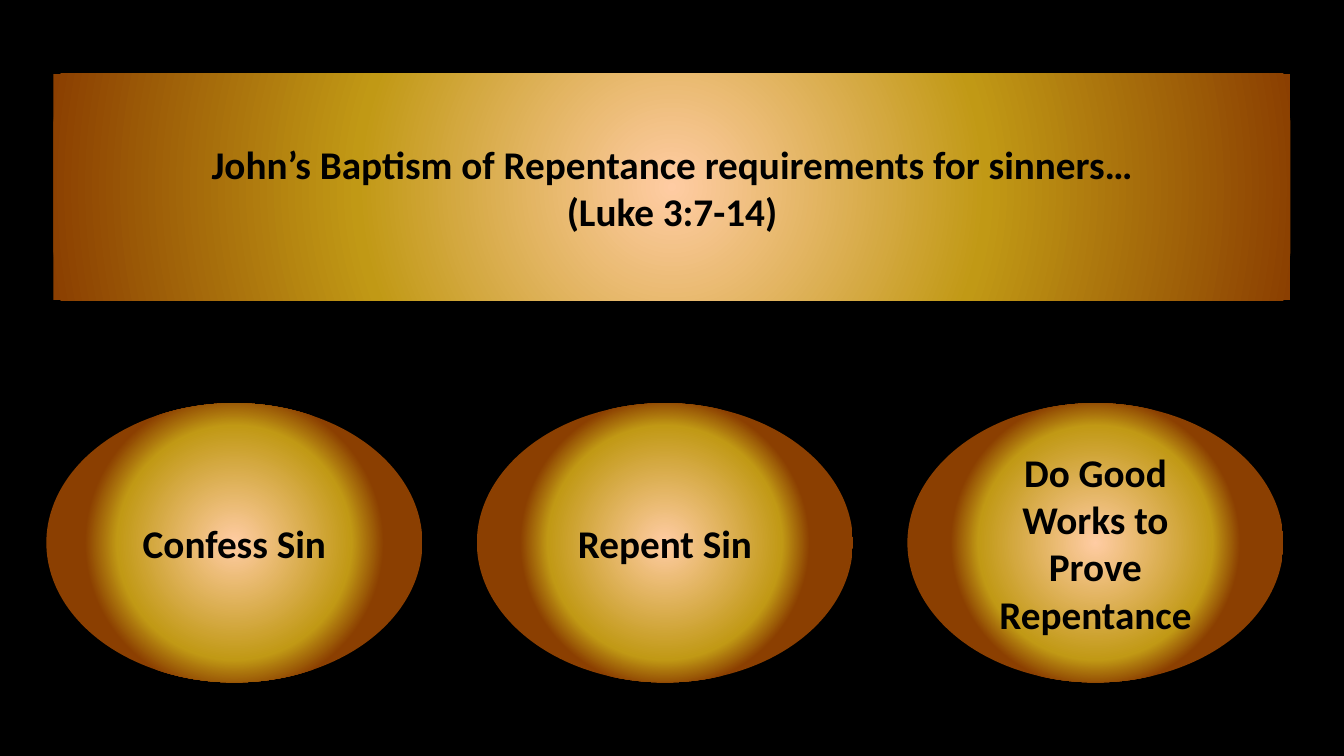
import pptx
import pptx.util
import pptx.dml.color
import pptx.enum.shapes
import pptx.enum.text
import pptx.oxml
import pptx.oxml.ns

Inches = pptx.util.Inches
RGBColor = pptx.dml.color.RGBColor
MSO_SHAPE = pptx.enum.shapes.MSO_SHAPE

# Content
BANNER = ["John’s Baptism of Repentance requirements for sinners…", "(Luke 3:7-14)"]
# Requirement and the percentage where its gradient reaches the edge colour
REQUIREMENTS = [
    ("Confess Sin", 64),
    ("Repent Sin", 62),
    ("Do Good Works to Prove Repentance", 62),
]

# Style
BLACK = RGBColor(0x00, 0x00, 0x00)
PEACH = RGBColor(0xFF, 0xCC, 0xA3)
GOLD = RGBColor(0xC1, 0x99, 0x15)
BROWN = RGBColor(0x8B, 0x3F, 0x01)
FONT, SIZE = "Calibri", 28

# Layout
BANNER_BOX = (0.53, 0.73, 12.27, 2.25)
OVAL_LEFT, OVAL_TOP, OVAL_W, OVAL_H = 0.46, 4, 3.73, 2.77
OVAL_STEP = 4.27


def radial_fill(sp, edge):
    """Fill a shape with a circular gradient running from its centre."""
    sp.fill.gradient()
    stops = "".join(
        f'<a:gs pos="{pos * 1000}"><a:srgbClr val="{color}"/></a:gs>'
        for pos, color in ((0, PEACH), (50, GOLD), (edge, BROWN)))
    gradient = pptx.oxml.parse_xml(
        f'<a:gradFill {pptx.oxml.ns.nsdecls("a")} rotWithShape="1">'
        f'<a:gsLst>{stops}</a:gsLst><a:path path="circle">'
        '<a:fillToRect l="50000" t="50000" r="50000" b="50000"/>'
        '</a:path></a:gradFill>')
    plain = sp.element.spPr.find(pptx.oxml.ns.qn("a:gradFill"))
    sp.element.spPr.replace(plain, gradient)


def add_label(s, kind, box, lines, edge):
    sp = s.shapes.add_shape(kind, *(Inches(v) for v in box))
    sp.shadow.inherit = False
    sp.line.fill.background()
    radial_fill(sp, edge)
    tf = sp.text_frame
    tf.word_wrap = True
    tf.vertical_anchor = pptx.enum.text.MSO_ANCHOR.MIDDLE
    tf.text = "\n".join(lines)
    for p in tf.paragraphs:
        p.alignment = pptx.enum.text.PP_ALIGN.CENTER
        for r in p.runs:
            r.font.name = FONT
            r.font.size = pptx.util.Pt(SIZE)
            r.font.bold = True
            r.font.color.rgb = BLACK
    return sp


def main():
    prs = pptx.Presentation()
    prs.slide_width, prs.slide_height = Inches(13.33), Inches(7.5)
    s = prs.slides.add_slide(prs.slide_layouts[6])
    s.background.fill.solid()
    s.background.fill.fore_color.rgb = BLACK

    # Banner with a soft shadow below
    banner = add_label(s, MSO_SHAPE.RECTANGLE, BANNER_BOX, BANNER, 100)
    effects = banner.element.spPr.find(pptx.oxml.ns.qn("a:effectLst"))
    effects.append(pptx.oxml.parse_xml(
        f'<a:outerShdw {pptx.oxml.ns.nsdecls("a")} blurRad="{pptx.util.Pt(3.5)}" '
        f'dist="{pptx.util.Pt(2.2)}" dir="5400000" rotWithShape="0">'
        f'<a:srgbClr val="{BLACK}"><a:alpha val="32000"/></a:srgbClr></a:outerShdw>'))

    # Row of requirements
    for i, (requirement, edge) in enumerate(REQUIREMENTS):
        box = (OVAL_LEFT + i * OVAL_STEP, OVAL_TOP, OVAL_W, OVAL_H)
        add_label(s, MSO_SHAPE.OVAL, box, [requirement], edge)

    prs.save("out.pptx")


if __name__ == "__main__":
    main()
